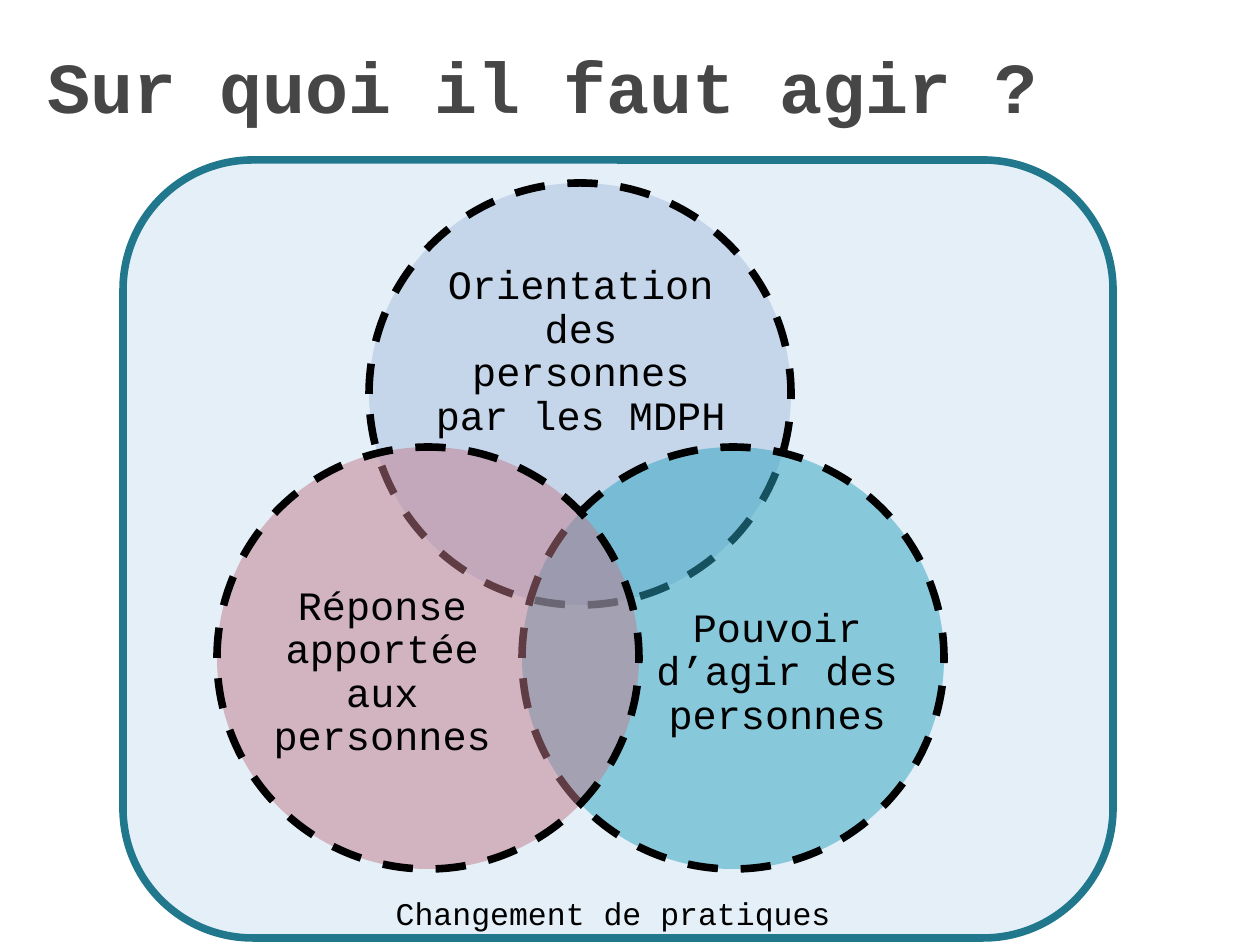
from lxml import etree
from pptx import Presentation
from pptx import util as u
from pptx.dml.color import RGBColor
from pptx.enum import dml, shapes, text
from pptx.oxml.ns import qn

HUES = {
    "panel": "BDD7EE", "edge": "21788D", "ink": "000000", "title": "464646",
    "blue": "A8BFDF", "teal": "2DA2BF", "rose": "C07B8A",
}


class Deck:
    """Style and current slide, with lengths in px at 126 to the inch."""

    font = "Courier New"
    weight = 4.33

    def __init__(self, wide, high):
        self.file = Presentation()
        self.file.slide_width, self.file.slide_height = self.emu(wide, high)
        self.slide = self.file.slides.add_slide(self.file.slide_layouts[6])

    def emu(self, *sizes):
        return [u.Emu(round(size * 914400 / 126)) for size in sizes]

    def shape(self, kind, box, fill, alpha, line, dash=None):
        item = self.slide.shapes.add_shape(kind, *self.emu(*box))
        item.shadow.inherit = False
        item.fill.solid()
        item.fill.fore_color.rgb = RGBColor.from_string(HUES[fill])
        color = item.fill._xPr.find(qn("a:solidFill"))[0]
        etree.SubElement(color, qn("a:alpha")).set("val", str(alpha * 1000))
        item.line.color.rgb = RGBColor.from_string(HUES[line])
        item.line.width = u.Pt(self.weight)
        if dash:
            item.line.dash_style = dash

    def text(self, words, box, size, hue="ink", bold=False, align="CENTER",
             anchor="MIDDLE", inset=None, lead=None):
        frame = self.slide.shapes.add_textbox(*self.emu(*box)).text_frame
        frame.word_wrap = True
        frame.vertical_anchor = text.MSO_ANCHOR[anchor]
        if inset is not None:
            for side in ("left", "top", "right", "bottom"):
                setattr(frame, "margin_" + side, inset)
        para = frame.paragraphs[0]
        para.text = words
        para.alignment = text.PP_ALIGN[align]
        if lead:
            para.line_spacing = lead
        para.font.name = self.font
        para.font.size = u.Pt(size)
        para.font.bold = bold
        para.font.color.rgb = RGBColor.from_string(HUES[hue])

    def circle(self, left, top, fill, words, box):
        self.shape(shapes.MSO_SHAPE.OVAL, (left, top, 422, 422), fill, 50,
                   "ink", dml.MSO_LINE.DASH)
        self.text(words, box, 23, inset=0, lead=0.9)


def main():
    deck = Deck(1260, 945)
    deck.shape(shapes.MSO_SHAPE.ROUNDED_RECTANGLE, (123, 160, 990, 778),
               "panel", 40, "edge")
    deck.circle(369, 183, "blue", "Orientation des personnes par les MDPH",
                (426, 257, 310, 190))
    deck.circle(522, 447, "teal", "Pouvoir d’agir des personnes",
                (651, 556, 253, 233))
    deck.circle(217, 447, "rose", "Réponse apportée aux personnes",
                (256, 556, 253, 233))
    deck.text("Changement de pratiques", (358, 888, 510, 50), 18, anchor="TOP")
    deck.text("Sur quoi il faut agir ?", (35, 6, 1181, 158), 41, "title",
              bold=True, align="LEFT")
    deck.file.save("out.pptx")


if __name__ == "__main__":
    main()
